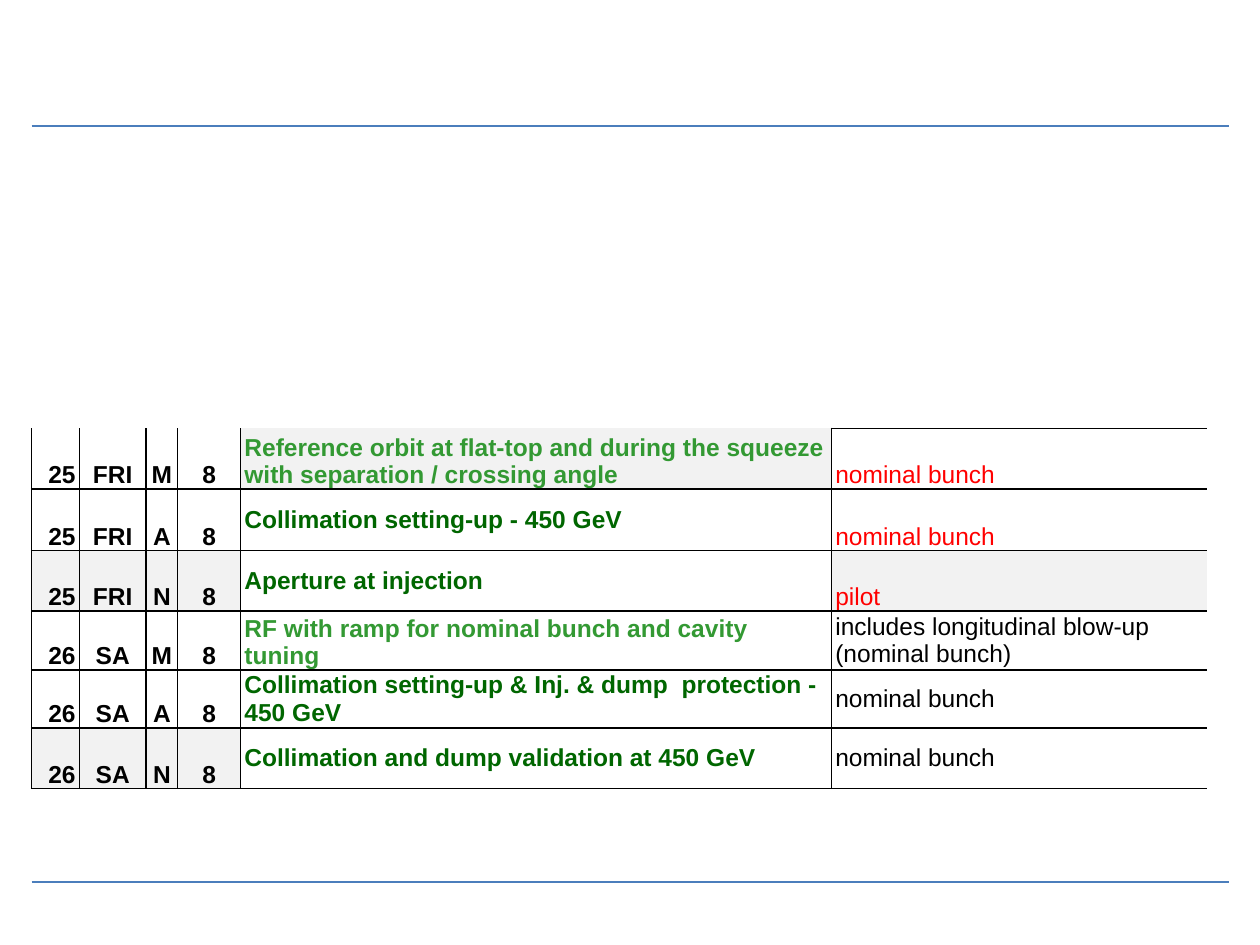
"""Build a slide with a beam commissioning shift table between two rules."""
from dataclasses import dataclass
from typing import Optional

import pptx
import pptx.dml.color
import pptx.enum.shapes
import pptx.enum.text
import pptx.oxml
import pptx.util
from lxml import etree

RGBColor = pptx.dml.color.RGBColor
Inches = pptx.util.Inches
Pt = pptx.util.Pt
Align = pptx.enum.text.PP_ALIGN
Anchor = pptx.enum.text.MSO_ANCHOR

BLACK = RGBColor(0x00, 0x00, 0x00)
WHITE = RGBColor(0xFF, 0xFF, 0xFF)
GREY = RGBColor(0xF2, 0xF2, 0xF2)
BLUE = RGBColor(0x4B, 0x7E, 0xBC)
LIME = RGBColor(0x33, 0x99, 0x33)
GREEN = RGBColor(0x00, 0x66, 0x00)
RED = RGBColor(0xFF, 0x00, 0x00)

COLS = (0.38, 0.53, 0.25, 0.5, 4.69, 2.98)
ROWS = (0.48, 0.49, 0.48, 0.47, 0.46, 0.48)
LAST = len(COLS) - 1


@dataclass
class Shift:
    day: str
    name: str
    code: str
    task: str
    note: str
    ink: RGBColor = GREEN
    tone: RGBColor = BLACK
    base: Optional[RGBColor] = None
    back: Optional[RGBColor] = None
    pad: RGBColor = WHITE


SHIFTS = (
    Shift("25", "FRI", "M", "Reference orbit at flat-top and during the squeeze "
          "with separation / crossing angle", "nominal bunch",
          ink=LIME, tone=RED, base=WHITE, back=GREY),
    Shift("25", "FRI", "A", "Collimation setting-up - 450 GeV", "nominal bunch",
          tone=RED, base=WHITE),
    Shift("25", "FRI", "N", "Aperture at injection", "pilot",
          tone=RED, base=GREY, pad=GREY),
    Shift("26", "SA", "M", "RF with ramp for nominal bunch and cavity tuning",
          "includes longitudinal blow-up (nominal bunch)", ink=LIME),
    Shift("26", "SA", "A", "Collimation setting-up & Inj. & dump  protection - 450 GeV",
          "nominal bunch"),
    Shift("26", "SA", "N", "Collimation and dump validation at 450 GeV",
          "nominal bunch", base=GREY),
)


def add_rule(slide, top: float) -> None:
    rule = slide.shapes.add_connector(
        pptx.enum.shapes.MSO_CONNECTOR.STRAIGHT,
        Inches(0.25), Inches(top), Inches(9.75), Inches(top))
    rule.line.color.rgb = BLUE
    rule.line.width = Pt(1.5)
    etree.SubElement(rule._element.spPr, pptx.oxml.ns.qn("a:effectLst"))


def set_edges(cell, shown: str) -> None:
    props = cell._tc.get_or_add_tcPr()
    for side in "LRTB":
        edge = etree.SubElement(props, pptx.oxml.ns.qn(f"a:ln{side}"), w=str(Pt(1)))
        if side in shown:
            fill = etree.SubElement(edge, pptx.oxml.ns.qn("a:solidFill"))
            etree.SubElement(fill, pptx.oxml.ns.qn("a:srgbClr"), val=str(BLACK))
        else:
            etree.SubElement(edge, pptx.oxml.ns.qn("a:noFill"))


def put_text(cell, text: str, *, color=BLACK, bold=True, align=Align.LEFT,
             anchor=Anchor.BOTTOM, fill=None) -> None:
    cell.margin_left = cell.margin_right = Inches(0.03)
    cell.margin_top = cell.margin_bottom = 0
    cell.vertical_anchor = anchor
    if fill is None:
        cell.fill.background()
    else:
        cell.fill.solid()
        cell.fill.fore_color.rgb = fill
    para = cell.text_frame.paragraphs[0]
    para.alignment = align
    run = para.add_run()
    run.text = text
    run.font.name = "Arial"
    run.font.size = Pt(14)
    run.font.bold = bold
    run.font.color.rgb = color


def fill_row(table, row: int, shift: Shift) -> None:
    cells = [table.cell(row, col) for col in range(len(COLS))]
    for col, cell in enumerate(cells):
        right = "R" if col < LAST else ""
        top = "T" if row or col == LAST else ""
        set_edges(cell, "LB" + right + top)
    put_text(cells[0], shift.day, align=Align.RIGHT, fill=shift.base)
    for cell, text in zip(cells[1:4], (shift.name, shift.code, "8")):
        put_text(cell, text, align=Align.CENTER, fill=shift.base)
    put_text(cells[4], shift.task, color=shift.ink, fill=shift.back,
             anchor=Anchor.BOTTOM if shift.ink == LIME else Anchor.MIDDLE)
    put_text(cells[5], shift.note, color=shift.tone, bold=False, fill=shift.pad,
             anchor=Anchor.BOTTOM if shift.tone == RED else Anchor.MIDDLE)


def add_plan(slide) -> None:
    table = slide.shapes.add_table(
        len(ROWS), len(COLS), Inches(0.25), Inches(3.4),
        Inches(sum(COLS)), Inches(sum(ROWS))).table
    table.first_row = table.horz_banding = False
    for col, width in zip(table.columns, COLS):
        col.width = Inches(width)
    for row, height in zip(table.rows, ROWS):
        row.height = Inches(height)
    for row, shift in enumerate(SHIFTS):
        fill_row(table, row, shift)


def main() -> None:
    deck = pptx.Presentation()
    deck.slide_width, deck.slide_height = Inches(10), Inches(7.5)
    slide = deck.slides.add_slide(deck.slide_layouts[6])
    for top in (1, 7):
        add_rule(slide, top)
    add_plan(slide)
    deck.save("out.pptx")


if __name__ == "__main__":
    main()
